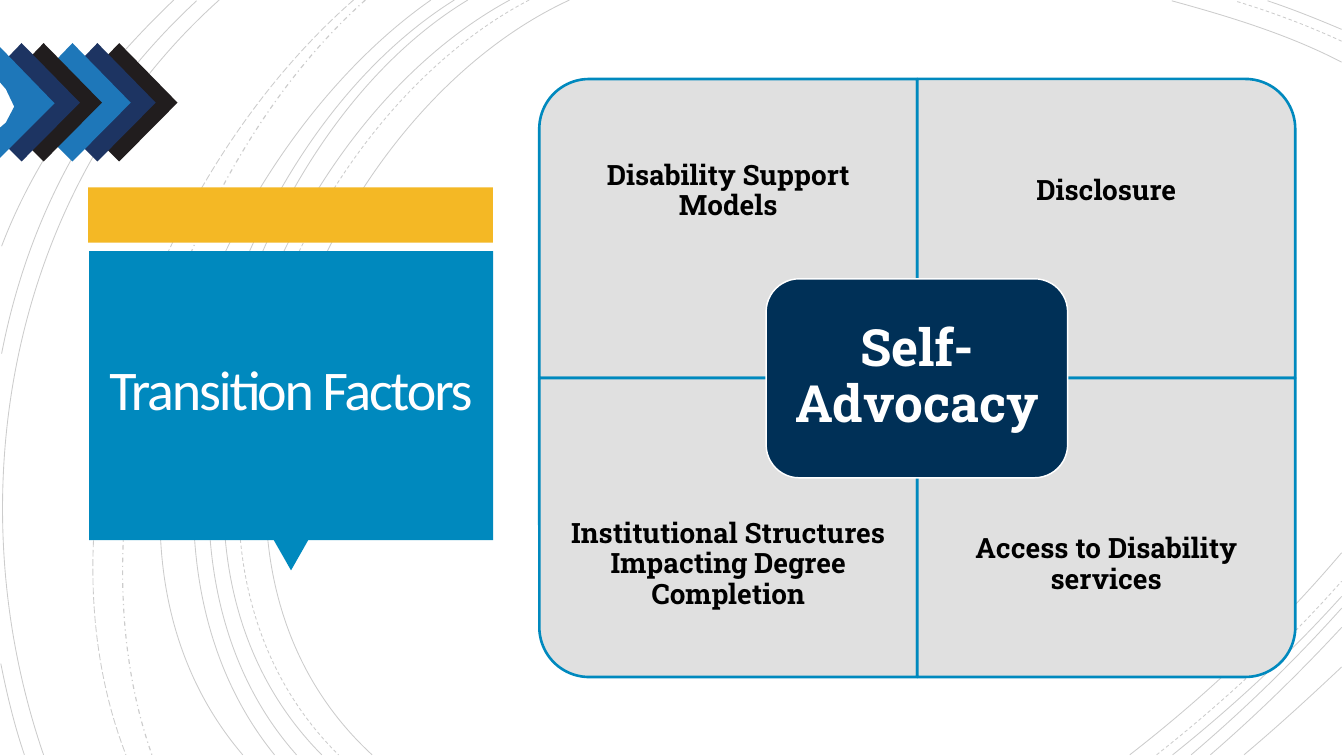
from pptx import Presentation
from pptx import oxml
from pptx.dml.color import RGBColor
from pptx.enum import dml, shapes, text
from pptx.oxml import ns
from pptx.util import Pt

HUES = {"gold": "F4B825", "blue": "0089BE", "navy": "003057", "gray": "E0E0E0",
        "black": "000000", "white": "FFFFFF", "title": "FFFEFF",
        "coal": "211D1E", "ink": "1D3462", "sky": "1E77B9"}
HUE = {name: RGBColor.from_string(code) for name, code in HUES.items()}
FORM = shapes.MSO_SHAPE
DASH = dml.MSO_LINE
FIT = text.MSO_AUTO_SIZE

deck = Presentation()
deck.slide_width, deck.slide_height = Pt(1152), Pt(648)
slide = deck.slides.add_slide(deck.slide_layouts[5])
items = slide.shapes


def paint(shape, fill=None, line=None, width=1):
    shape.shadow.inherit = False
    for part, hue in ((shape.fill, fill), (shape.line.fill, line)):
        if hue:
            part.solid()
            part.fore_color.rgb = HUE[hue]
        else:
            part.background()
    if line:
        shape.line.width = Pt(width)


def write(shape, words, pad, gap, style, hue):
    frame = shape.text_frame
    frame.text = words
    look = {"word_wrap": True, "auto_size": FIT.NONE,
            "vertical_anchor": text.MSO_ANCHOR.MIDDLE}
    for side in ("left", "top", "right", "bottom"):
        look["margin_" + side] = Pt(pad)
    para = frame.paragraphs[0]
    font = para.runs[0].font
    font.color.rgb = HUE[hue]
    for part, values in ((frame, look), (font, style),
                         (para, {"alignment": text.PP_ALIGN.CENTER, "line_spacing": gap})):
        for key, value in values.items():
            setattr(part, key, value)


arcs = [
    (488.2, 0, 272.2, 99.4, 123.1, 466.6, 319, 647),
    (1150, 53.3, 1104.5, 29.5, 1051.9, 13.7, 1004.4, 0.7),
    (968.4, 647, 1033.9, 596.2, 1095.8, 537.8, 1150, 473.8),
    (453.6, 0, 246.2, 108, 105.8, 464.4, 290.2, 647, DASH.DASH),
    (1150, 35.3, 1120.3, 21.6, 1089.4, 10.1, 1058.4, 0.7, DASH.DASH),
    (991.4, 647, 1047.6, 602.6, 1101.6, 553, 1150, 498.2, DASH.DASH),
    (437, 0, 233.3, 110.2, 94.3, 463.7, 275.8, 647),
    (1150, 25.2, 1129.7, 16.6, 1108.1, 7.9, 1086.5, 0.7),
    (1005.1, 647, 1057, 605.5, 1105.9, 560.2, 1150, 511.2),
    (401, 0, 210.2, 115.2, 94.3, 467.3, 254.2, 647),
    (1021, 647, 1066.3, 608.4, 1109.5, 566.6, 1150, 521.3),
    (389.5, 0, 199.4, 118.8, 84.2, 460.8, 235.4, 647),
    (1037.5, 647, 1077.1, 612.7, 1114.6, 576, 1150, 537.8),
    (369.4, 0, 187.9, 126.7, 46.1, 457.2, 208.1, 647),
    (1066.3, 647, 1095.1, 622.8, 1122.5, 597.6, 1150, 571.7),
    (313.2, 0, 151.9, 144, 56.9, 439.9, 130.3, 647, DASH.DASH_DOT),
    (303.1, 0, 136.1, 146.2, 24.5, 431.3, 108, 647, DASH.LONG_DASH),
    (187.9, 0, 9.4, 159.8, -39.6, 423.4, 37.4, 647),
    (168.5, 0.7, 79.9, 82.8, 24.5, 184.3, 1.4, 303.1),
    (0.7, 568.8, 5.8, 594.7, 12.2, 621.4, 20.9, 647),
    (149, 0, 86.4, 59.8, 32.4, 129.6, 1.4, 211),
]
for arc in arcs:
    dots = [(Pt(x), Pt(y)) for x, y in zip(arc[0:8:2], arc[1:8:2])]
    pen = items.build_freeform(*dots[0])
    pen.add_line_segments(dots[1:], close=False)
    curve = pen.convert_to_shape()
    trace = curve.element.find(".//" + ns.qn("a:path"))
    bend = oxml.parse_xml(f'<a:cubicBezTo {ns.nsdecls("a")}/>')
    for leg in trace.findall(ns.qn("a:lnTo")):
        bend.append(leg[0])
        trace.remove(leg)
    trace.append(bend)
    dash = arc[8] if len(arc) > 8 else DASH.SOLID
    paint(curve, None, "black", 1 if dash == DASH.DASH_DOT else 0.75)
    curve.line.dash_style = dash
    color = curve.element.find(".//" + ns.qn("a:ln")).find(".//" + ns.qn("a:srgbClr"))
    color.append(oxml.parse_xml(f'<a:alpha {ns.nsdecls("a")} val="20000"/>'))

for kind, x, y, w, h, turn, hue in [
        (FORM.RECTANGLE, 75.6, 160.6, 347, 47.5, 0, "gold"),
        (FORM.ISOSCELES_TRIANGLE, 234.7, 463, 29.5, 25.9, 180, "blue"),
        (FORM.RECTANGLE, 76.3, 215.3, 346.3, 247.7, 0, "blue")]:
    block = items.add_shape(kind, Pt(x), Pt(y), Pt(w), Pt(h))
    block.rotation = turn
    paint(block, hue)

wedge = [(14.4, 0), (0, 15), (22, 38.9), (29.8, 54.7), (22, 68.4),
         (0, 87.1), (14.4, 101.5), (64.4, 51.1)]
bands = [([(left + x, 36.9 + y) for x, y in wedge], hue) for left, hue in [
    (87.8, "coal"), (69.1, "ink"), (47.7, "sky"), (23, "coal"), (4.1, "ink")]]
bands.append(([(0, 40.3), (0, 70.6), (5, 76.3), (12.2, 91.4), (5, 105.1),
               (0, 109.4), (0, 135.4), (46.8, 88.6)], "sky"))
for dots, hue in bands:
    dots = [(Pt(x), Pt(y)) for x, y in dots]
    pen = items.build_freeform(*dots[0])
    pen.add_line_segments(dots[1:])
    paint(pen.convert_to_shape(), hue)

title = items.title
for key, value in {"left": 84.2, "top": 221.8, "width": 330.5, "height": 229.7}.items():
    setattr(title, key, Pt(value))
write(title, "Transition Factors", 0, 0.85, {"name": "Calibri", "size": Pt(48)}, "title")
title.text_frame.margin_top = Pt(0.72)
title.text_frame.auto_size = FIT.SHAPE_TO_FIT_TEXT
title.element.find(".//" + ns.qn("a:rPr")).set("spc", "-180")
title.element.getparent().append(title.element)

LEFT, TOP, WIDE, HIGH, DEEP = 462.24, 67.68, 324, 256.32, 192.24
slab = {"name": "Roboto Slab", "size": Pt(24), "bold": True}
for spot, (words, turn) in enumerate([
        ("Disability Support Models", 270), ("Disclosure", 0),
        ("Institutional Structures Impacting Degree Completion", 180),
        ("Access to Disability services", 90)]):
    row, col = divmod(spot, 2)
    x, y = LEFT + col * WIDE, TOP + row * HIGH
    w, h = (HIGH, WIDE) if turn % 180 else (WIDE, HIGH)
    panel = items.add_shape(FORM.ROUND_1_RECTANGLE, Pt(x + (WIDE - w) / 2),
                            Pt(y + (HIGH - h) / 2), Pt(w), Pt(h))
    panel.rotation = turn
    paint(panel, "gray", "blue", 2.25)
    label = items.add_textbox(Pt(x), Pt(y + row * (HIGH - DEEP)), Pt(WIDE), Pt(DEEP))
    write(label, words, 13.7, 0.9, slab, "black")

core = items.add_shape(FORM.ROUNDED_RECTANGLE, Pt(656.64), Pt(239), Pt(258.5), Pt(170.6))
paint(core, "navy", "white", 1.25)
label = items.add_textbox(Pt(665.3), Pt(247), Pt(241.9), Pt(154.1))
write(label, "Self-Advocacy", 13, 0.9, {**slab, "size": Pt(44)}, "white")

deck.save("out.pptx")
